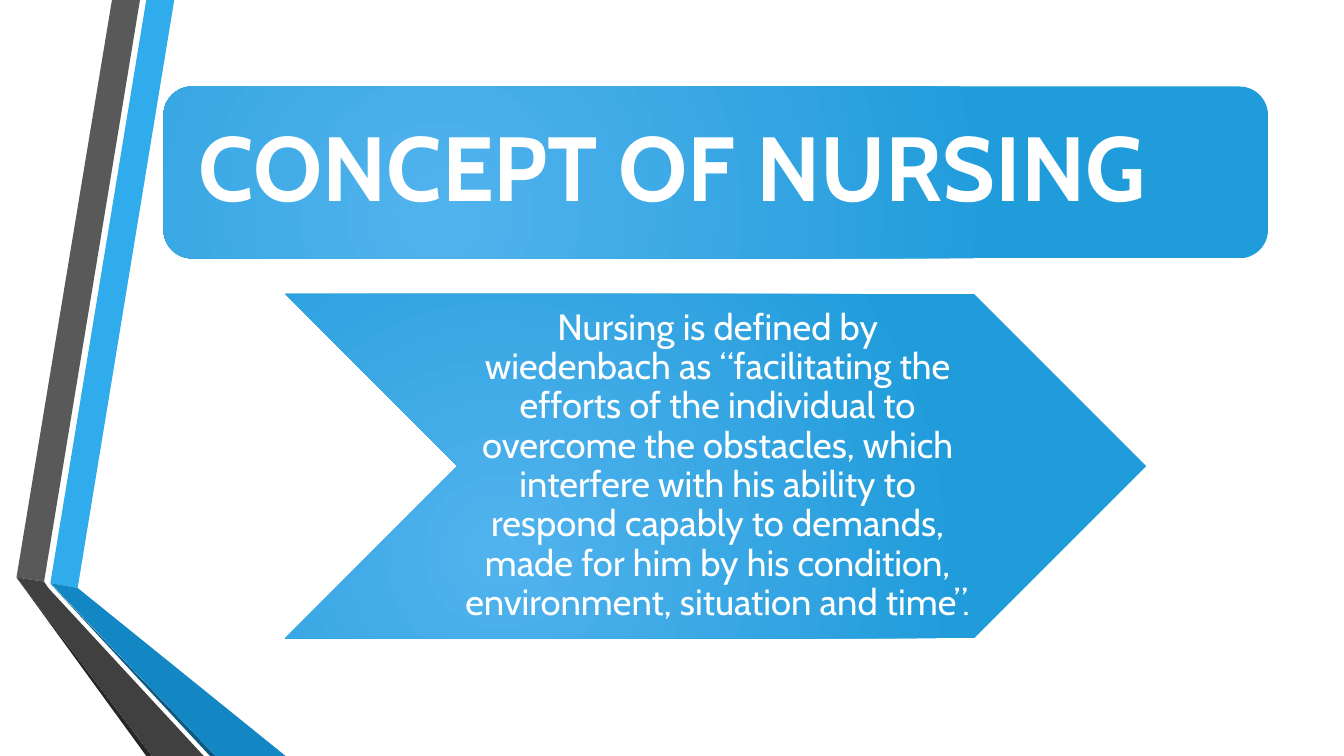
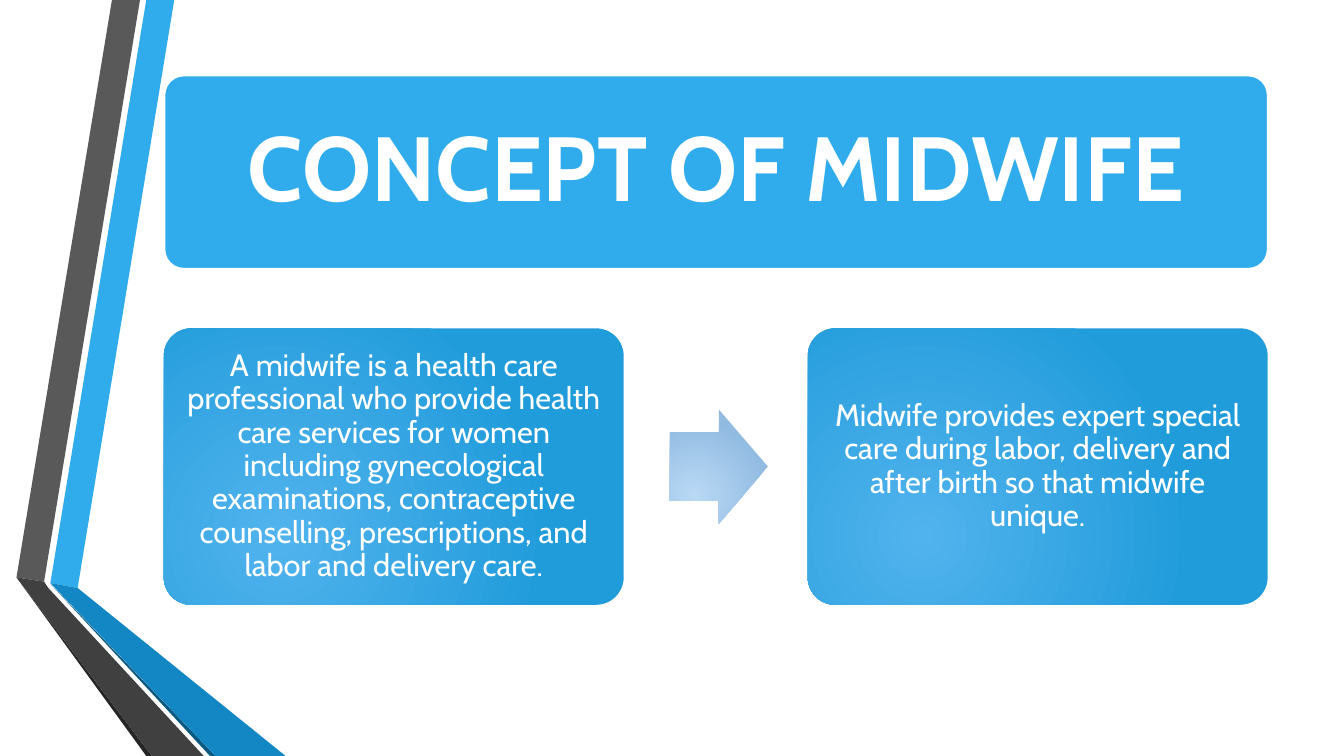
from lxml import etree
from pptx import Presentation
from pptx import util as u
from pptx.dml.color import RGBColor
from pptx.enum import shapes, text
from pptx.oxml.ns import qn

COLORS = {
    "white": "FFFFFF",
    "sky": "30ACEC",
    "blue": "1287C3",
    "navy": "0C5A82",
    "gray": "595959",
    "charcoal": "404040",
    "black": "262626",
}
GRADIENTS = {
    "panel": ("51B3ED", "219CDB"),
    "arrow": ("B9D9F5", "92BBE2"),
}
FONT = "Cabin"
TITLE_MARGINS = (25, 20, 25, 20)
CARD_MARGINS = (6.5, 6.5, 6.5, 6.5)
CHEVRON_MARGINS = (3, 1.5, 0, 1.5)

# Corner points of the folded ribbons, from back to front
RIBBONS = [
    ("sky", [(36, 416.5), (55.5, 420), (124.5, 0), (104.5, 0)]),
    ("gray", [(100, 0), (80, 0), (11.8, 412.5), (31.5, 415.5)]),
    ("black", [(11.8, 412.5), (104.5, 540), (108.5, 540)]),
    ("navy", [(36, 417), (150, 540), (154, 540)]),
    ("blue", [(36, 416.5), (154, 540), (204, 540), (55.5, 420)]),
    ("charcoal", [(145.5, 540), (34.5, 420), (31.5, 415.5), (11.8, 412.5), (108.5, 540)]),
]


def color(name_or_hex):
    return RGBColor.from_string(COLORS.get(name_or_hex, name_or_hex))


def place(shape, box):
    for name, value in zip(("left", "top", "width", "height"), box):
        setattr(shape, name, u.Pt(value))


def fill_radial(shape, gradient):
    """Fill with a circular gradient centred in the lower left quarter."""
    shape.fill.gradient()
    for stop, value in zip(shape.fill.gradient_stops, GRADIENTS[gradient]):
        stop.color.rgb = color(value)
    gradient_fill = shape._element.spPr.find(qn("a:gradFill"))
    gradient_fill.remove(gradient_fill.find(qn("a:lin")))
    circle = etree.SubElement(gradient_fill, qn("a:path"), {"path": "circle"})
    focus = {"l": "50000", "t": "100000", "r": "100000", "b": "50000"}
    etree.SubElement(circle, qn("a:fillToRect"), focus)


def fill_plain(shape, name):
    shape.fill.solid()
    shape.fill.fore_color.rgb = color(name)


def add_panel(slide, kind, box, fill="panel", adjustments=()):
    shape = slide.shapes.add_shape(kind, *map(u.Pt, box))
    shape.shadow.inherit = False
    shape.line.fill.background()
    for index, value in enumerate(adjustments):
        shape.adjustments[index] = value
    if fill in GRADIENTS:
        fill_radial(shape, fill)
    else:
        fill_plain(shape, fill)
    return shape


def write_text(shape, content, size, margins, align=text.PP_ALIGN.CENTER, bold=False):
    frame = shape.text_frame
    frame.text = content
    sides = ("margin_left", "margin_top", "margin_right", "margin_bottom")
    frame_format = {
        "word_wrap": True,
        "auto_size": text.MSO_AUTO_SIZE.NONE,
        "vertical_anchor": text.MSO_ANCHOR.MIDDLE,
        **{side: u.Pt(margin) for side, margin in zip(sides, margins)},
    }
    paragraph = frame.paragraphs[0]
    paragraph_format = {"alignment": align, "line_spacing": 0.9}
    font_format = {"name": FONT, "size": u.Pt(size), "bold": bold}
    for target, values in (
        (frame, frame_format),
        (paragraph, paragraph_format),
        (paragraph.runs[0].font, font_format),
    ):
        for name, value in values.items():
            setattr(target, name, value)
    paragraph.runs[0].font.color.rgb = color("white")


def add_title(slide, content, banner, box, align):
    """Write the title placeholder on top of its banner."""
    title = slide.shapes.title
    place(title, box)
    write_text(title, content, 65, TITLE_MARGINS, align, bold=True)
    banner._element.addnext(title._element)


def add_ribbons(slide, layout):
    """Draw the ribbons and move them to the layout that all slides share."""
    for index, (name, points) in enumerate(RIBBONS):
        corners = [(u.Pt(x), u.Pt(y)) for x, y in points]
        builder = slide.shapes.build_freeform(*corners[0])
        builder.add_line_segments(corners[1:], close=True)
        ribbon = builder.convert_to_shape()
        ribbon.shadow.inherit = False
        ribbon.line.fill.background()
        fill_plain(ribbon, name)
        ribbon._element.nvSpPr.cNvPr.set("id", str(101 + index))
        layout.shapes._spTree.insert(2 + index, ribbon._element)


def build_nursing(slide):
    box = (116.8, 61.8, 789, 122.8)
    banner = add_panel(slide, shapes.MSO_SHAPE.ROUNDED_RECTANGLE, box)
    add_title(slide, "CONCEPT OF NURSING", banner, box, text.PP_ALIGN.LEFT)
    chevron = add_panel(slide, shapes.MSO_SHAPE.CHEVRON, (203.8, 210, 615, 246))
    definition = (
        "Nursing is defined by wiedenbach as “facilitating the efforts of the "
        "individual to overcome the obstacles, which interfere with his ability "
        "to respond capably to demands, made for him by his condition, "
        "environment, situation and time”."
    )
    write_text(chevron, definition, 26, CHEVRON_MARGINS)


def build_midwife(slide):
    rounded = shapes.MSO_SHAPE.ROUNDED_RECTANGLE
    box = (117.5, 54, 788, 138)
    banner = add_panel(slide, rounded, box, "sky", [0.1])
    banner.line.color.rgb = color("white")
    banner.line.width = u.Pt(1.25)
    add_title(slide, "CONCEPT OF MIDWIFE", banner, box, text.PP_ALIGN.CENTER)

    card_left, card_top, card_width, card_height, card_step = 117, 234.5, 328.5, 197.5, 460
    cards = [
        "A midwife is a health care professional who provide health care services "
        "for women including gynecological examinations, contraceptive "
        "counselling, prescriptions, and labor and delivery care.",
        "Midwife provides expert special care during labor, delivery and after "
        "birth so that midwife unique.",
    ]
    for index, content in enumerate(cards):
        left = card_left + index * card_step
        card_box = (left, card_top, card_width, card_height)
        card = add_panel(slide, rounded, card_box, adjustments=[0.1])
        write_text(card, content, 22, CARD_MARGINS)

    arrow_height = 81.5
    arrow_top = card_top + (card_height - arrow_height) / 2
    arrow_box = (478.5, arrow_top, 70, arrow_height)
    add_panel(slide, shapes.MSO_SHAPE.RIGHT_ARROW, arrow_box, "arrow", [0.6, 0.5])


def main():
    presentation = Presentation()
    presentation.slide_width = u.Pt(960)
    presentation.slide_height = u.Pt(540)
    layout = presentation.slide_layouts.get_by_name("Title Only")
    for index, build in enumerate((build_nursing, build_midwife)):
        slide = presentation.slides.add_slide(layout)
        if index == 0:
            add_ribbons(slide, layout)
        build(slide)
    presentation.save("out.pptx")


if __name__ == "__main__":
    main()
